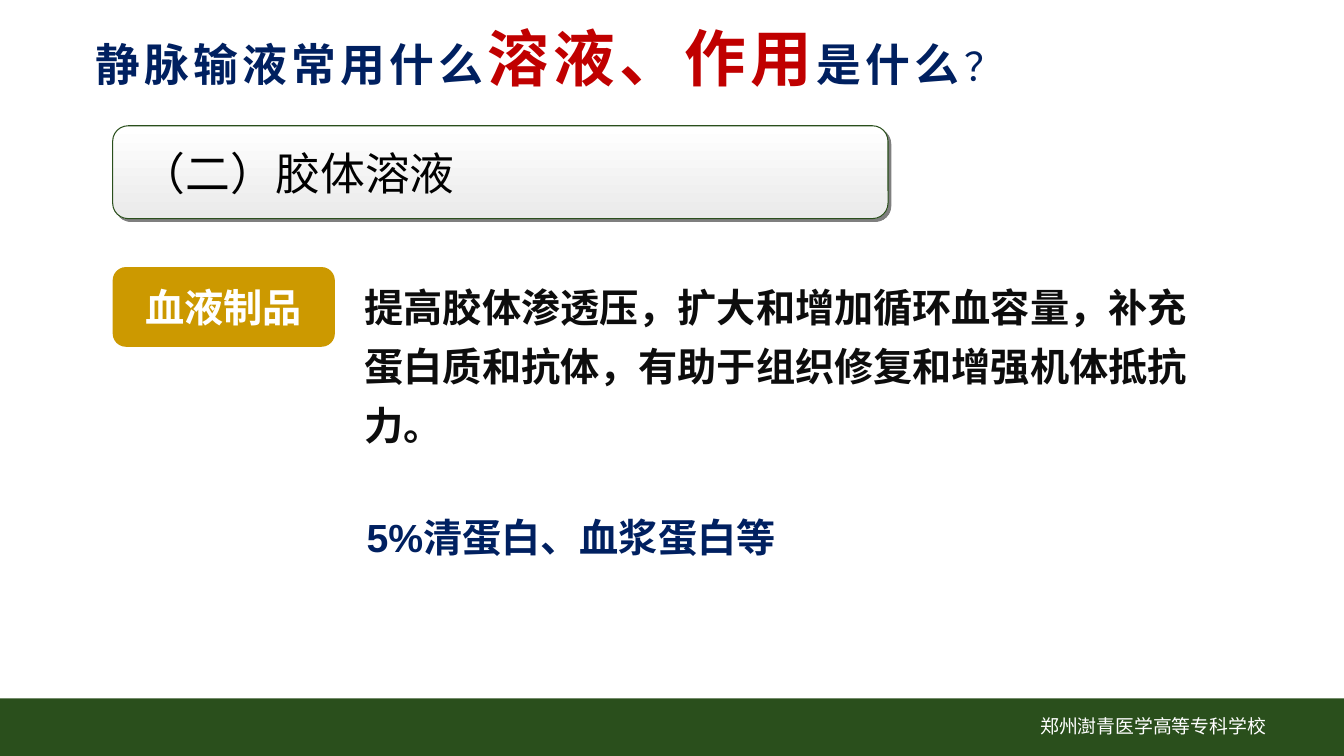
"""Build the slide on colloid solutions used for intravenous infusion."""
from dataclasses import dataclass
from typing import Any, Optional

from lxml import etree
from pptx import Presentation
from pptx.dml.color import RGBColor
from pptx.enum import shapes, text
from pptx.oxml import ns
from pptx.util import Cm, Pt


@dataclass(frozen=True)
class Theme:
    """Colours, fonts and type sizes of the slide."""
    green: str = "2A4F1C"
    gold: str = "CC9900"
    navy: str = "002060"
    red: str = "C00000"
    ink: str = "0D0D0D"
    black: str = "000000"
    white: str = "FFFFFF"
    grey: str = "EAEAEA"
    latin: str = "Arial"
    cjk: str = "Noto Sans CJK SC"
    title: float = 32
    accent: float = 44
    body: float = 28
    footer: float = 13.5


T = Theme()


@dataclass(frozen=True)
class Span:
    """A stretch of text in one format."""
    text: str
    size: float
    color: str
    bold: bool = True
    font: str = T.latin
    spacing: float = 0


@dataclass(frozen=True)
class Box:
    """A text box or preset shape, with its place in centimetres."""
    left: float
    top: float
    width: float
    height: float
    spans: tuple[Span, ...] = ()
    preset: Optional[Any] = None
    fill: tuple[str, ...] = ()
    line: Optional[str] = None
    shadow: bool = False
    centred: bool = False
    middle: bool = False
    inset: float = 0.25
    line_spacing: float = 1.0


ROUND = shapes.MSO_SHAPE.ROUNDED_RECTANGLE
TITLE = dict(font=T.cjk, spacing=3)
BOXES = (
    Box(0, 17.6, 33.87, 1.45, preset=shapes.MSO_SHAPE.RECTANGLE, fill=(T.green,)),
    Box(24.26, 17.53, 9.61, 1.52, centred=True, middle=True,
        spans=(Span("郑州澍青医学高等专科学校", T.footer, T.white, False, T.cjk),)),
    Box(2.84, 3.17, 19.54, 2.34, preset=ROUND, fill=(T.white, T.grey),
        line=T.green, shadow=True, middle=True, inset=0.6,
        spans=(Span("（二）胶体溶液", T.title, T.black, False),)),
    Box(2.15, 0.38, 28.18, 2.13, spans=(
        Span("静脉输液常用什么", T.title, T.navy, **TITLE),
        Span("溶液、作用", T.accent, T.red, **TITLE),
        Span("是什么", T.title, T.navy, **TITLE),
        Span("？", T.body, T.navy, False, **TITLE))),
    Box(2.84, 6.73, 5.6, 2.01, preset=ROUND, fill=(T.gold,), centred=True,
        middle=True, spans=(Span("血液制品", T.body, T.white),)),
    Box(8.94, 6.73, 22.07, 4.6, line_spacing=1.25, spans=(
        Span("提高胶体渗透压，扩大和增加循环血容量，补充"
             "蛋白质和抗体，有助于组织修复和增强机体抵抗力。", T.body, T.ink),)),
    Box(8.99, 12.52, 21.34, 1.6, line_spacing=1.25,
        spans=(Span("5%清蛋白、血浆蛋白等", T.body, T.navy),)),
)


def add_shadow(sp: Any) -> None:
    """Give a shape a hard shadow to its lower right."""
    effects = sp._element.spPr.find(ns.qn("a:effectLst"))
    shadow = etree.SubElement(effects, ns.qn("a:outerShdw"), blurRad="0",
                              dist=str(Pt(2.8)), dir="2700000", algn="ctr",
                              rotWithShape="0")
    color = etree.SubElement(shadow, ns.qn("a:srgbClr"), val=T.black)
    etree.SubElement(color, ns.qn("a:alpha"), val="50000")


def paint(sp: Any, box: Box) -> None:
    """Set the fill, outline and shadow of a preset shape."""
    if len(box.fill) == 1:
        sp.fill.solid()
        sp.fill.fore_color.rgb = RGBColor.from_string(box.fill[0])
    else:
        sp.fill.gradient()
        sp.fill.gradient_angle = 270
        for stop, color in zip(sp.fill.gradient_stops, box.fill):
            stop.color.rgb = RGBColor.from_string(color)
    if box.line:
        sp.line.color.rgb = RGBColor.from_string(box.line)
        sp.line.width = Pt(0.75)
    else:
        sp.line.fill.background()
    sp.shadow.inherit = False
    if box.shadow:
        add_shadow(sp)


def add_span(p: Any, span: Span) -> None:
    """Append one formatted run to a paragraph."""
    r = p.add_run()
    r.text = span.text
    r.font.size = Pt(span.size)
    r.font.bold = span.bold
    r.font.color.rgb = RGBColor.from_string(span.color)
    r.font.name = span.font
    props = r.font._element
    etree.SubElement(props, ns.qn("a:ea"), typeface=T.cjk)
    if span.spacing:
        props.set("spc", str(int(span.spacing * 100)))


def add_box(slide: Any, box: Box) -> None:
    """Draw one box with its text."""
    place = [Cm(v) for v in (box.left, box.top, box.width, box.height)]
    if box.preset is None:
        sp = slide.shapes.add_textbox(*place)
    else:
        sp = slide.shapes.add_shape(box.preset, *place)
        paint(sp, box)
    tf = sp.text_frame
    tf.word_wrap = True
    tf.margin_left = Cm(box.inset)
    anchors = text.MSO_ANCHOR
    tf.vertical_anchor = anchors.MIDDLE if box.middle else anchors.TOP
    p = tf.paragraphs[0]
    p.alignment = text.PP_ALIGN.CENTER if box.centred else text.PP_ALIGN.LEFT
    p.line_spacing = box.line_spacing
    for span in box.spans:
        add_span(p, span)


def main() -> None:
    """Create and save the presentation."""
    prs = Presentation()
    prs.slide_width, prs.slide_height = Cm(33.87), Cm(19.05)
    slide = prs.slides.add_slide(prs.slide_layouts[6])
    for box in BOXES:
        add_box(slide, box)
    prs.save("out.pptx")


if __name__ == "__main__":
    main()
